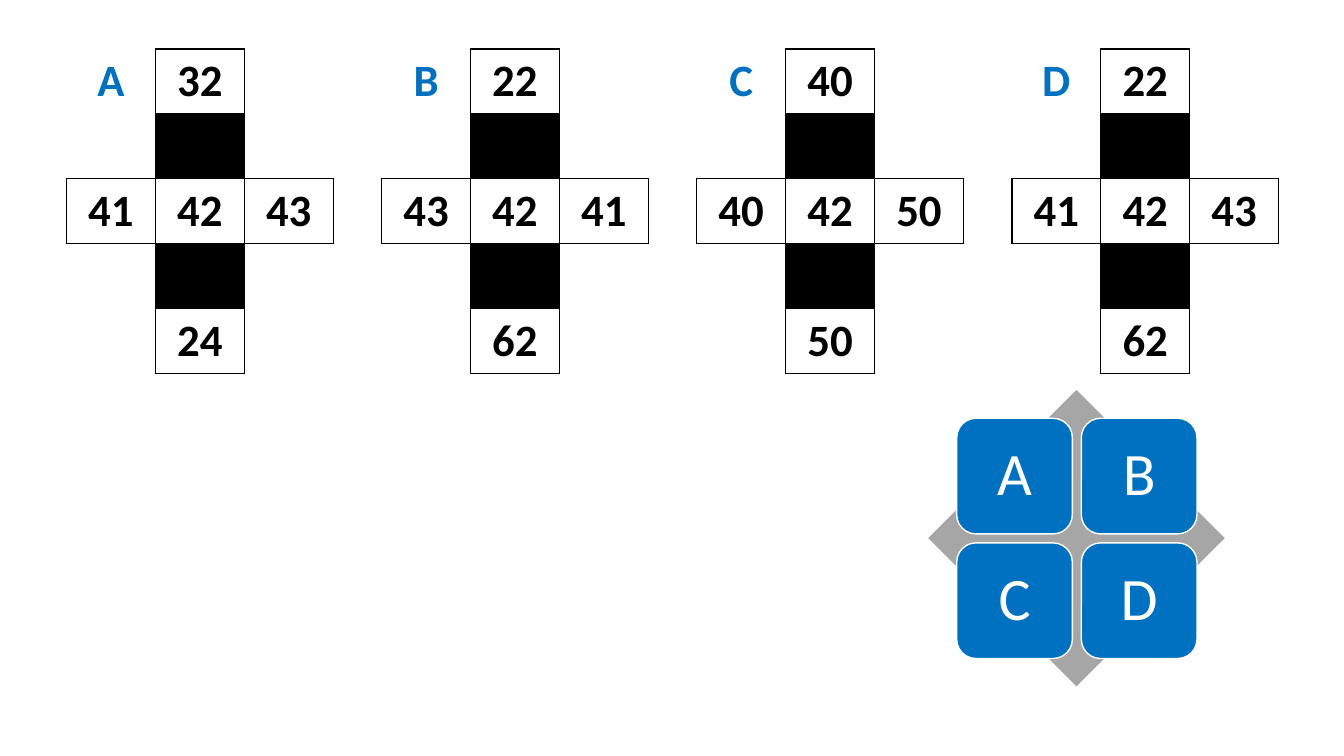
from dataclasses import dataclass
from typing import Any

from lxml import etree
from pptx import Presentation
from pptx import util as u
from pptx.dml.color import RGBColor
from pptx.enum import shapes, text
from pptx.oxml import ns

HUES = {"blue": "0070C0", "gray": "A6A6A6", "white": "FFFFFF", "black": "000000"}
SIDES = {"lnL": (0, -1), "lnR": (0, 1), "lnT": (-1, 0), "lnB": (1, 0)}
ROWS, COLS = 5, 3
CELL_W, CELL_H = 63.5, 46.4
LEFT, TOP, STEP = 47.5, 35, 225.1
HUB_X, HUB_Y, HUB = 663.1, 278.6, 211.7
TILE_X, TILE_Y, TILE, PITCH = 683.4, 298.8, 82.6, 89


@dataclass
class Cross:
    name: str
    top: str
    left: str
    right: str
    foot: str
    mid: str = "42"

    def grid(self) -> list[list[str]]:
        return [
            [self.name, self.top, ""],
            ["", "", ""],
            [self.left, self.mid, self.right],
            ["", "", ""],
            ["", self.foot, ""],
        ]


CROSSES = [
    Cross("A", "32", "41", "43", "24"),
    Cross("B", "22", "43", "41", "62"),
    Cross("C", "40", "40", "50", "50"),
    Cross("D", "22", "41", "43", "62"),
]


def paint(fill: Any, hue: str) -> None:
    fill.solid()
    fill.fore_color.rgb = RGBColor.from_string(HUES[hue])


def write(frame: Any, words: str, hue: str, **style: Any) -> None:
    para = frame.paragraphs[0]
    para.alignment = text.PP_ALIGN.CENTER
    run = para.add_run()
    run.text = words
    for key, val in {"name": "Calibri", **style}.items():
        setattr(run.font, key, val)
    run.font.color.rgb = RGBColor.from_string(HUES[hue])


def inside(row: int, col: int) -> bool:
    """Tell whether a cell belongs to the cross: middle column or middle row."""
    return 0 <= row < ROWS and 0 <= col < COLS and (col == 1 or row == 2)


def edge(cell: Any, row: int, col: int) -> None:
    """Rule black every side that touches the cross and clear the others."""
    props = cell._tc.get_or_add_tcPr()
    for spot, (tag, (down, over)) in enumerate(SIDES.items()):
        line = etree.Element(ns.qn(f"a:{tag}"), w=str(u.Pt(1)))
        if inside(row, col) or inside(row + down, col + over):
            fill = etree.SubElement(line, ns.qn("a:solidFill"))
            etree.SubElement(fill, ns.qn("a:srgbClr"), val=HUES["black"])
        else:
            etree.SubElement(line, ns.qn("a:noFill"))
        props.insert(spot, line)


def draw_cross(slide: Any, cross: Cross, left: float) -> None:
    table = slide.shapes.add_table(
        ROWS, COLS, u.Pt(left), u.Pt(TOP), u.Pt(COLS * CELL_W), u.Pt(ROWS * CELL_H)
    ).table
    table.first_row = table.horz_banding = False
    for col in table.columns:
        col.width = u.Pt(CELL_W)
    for row in table.rows:
        row.height = u.Pt(CELL_H)
    for r, line in enumerate(cross.grid()):
        for c, words in enumerate(line):
            cell = table.cell(r, c)
            if inside(r, c) and not words:
                paint(cell.fill, "black")
            else:
                cell.fill.background()
            edge(cell, r, c)
            if words:
                hue = "black" if inside(r, c) else "blue"
                write(cell.text_frame, words, hue, size=u.Pt(32), bold=True)


def draw_shape(slide: Any, kind: Any, left: float, top: float, side: float, hue: str) -> Any:
    shape = slide.shapes.add_shape(kind, u.Pt(left), u.Pt(top), u.Pt(side), u.Pt(side))
    shape.shadow.inherit = False
    paint(shape.fill, hue)
    shape.line.fill.background()
    return shape


def draw_tile(slide: Any, name: str, left: float, top: float) -> None:
    tile = draw_shape(slide, shapes.MSO_SHAPE.ROUNDED_RECTANGLE, left, top, TILE, "blue")
    paint(tile.line.fill, "white")
    tile.line.width = u.Pt(1)
    frame = tile.text_frame
    look = {"word_wrap": True, "vertical_anchor": text.MSO_ANCHOR.MIDDLE}
    look |= {f"margin_{side}": u.Pt(13) for side in ("left", "right", "top", "bottom")}
    for key, val in look.items():
        setattr(frame, key, val)
    write(frame, name, "white", size=u.Pt(43))
    frame.paragraphs[0].line_spacing = 0.9


def main() -> None:
    deck = Presentation()
    deck.slide_width, deck.slide_height = u.Pt(960), u.Pt(540)
    slide = deck.slides.add_slide(deck.slide_layouts[6])
    draw_shape(slide, shapes.MSO_SHAPE.DIAMOND, HUB_X, HUB_Y, HUB, "gray")
    for i, cross in enumerate(CROSSES):
        row, col = divmod(i, 2)
        draw_tile(slide, cross.name, TILE_X + col * PITCH, TILE_Y + row * PITCH)
        draw_cross(slide, cross, LEFT + i * STEP)
    deck.save("out.pptx")


if __name__ == "__main__":
    main()
